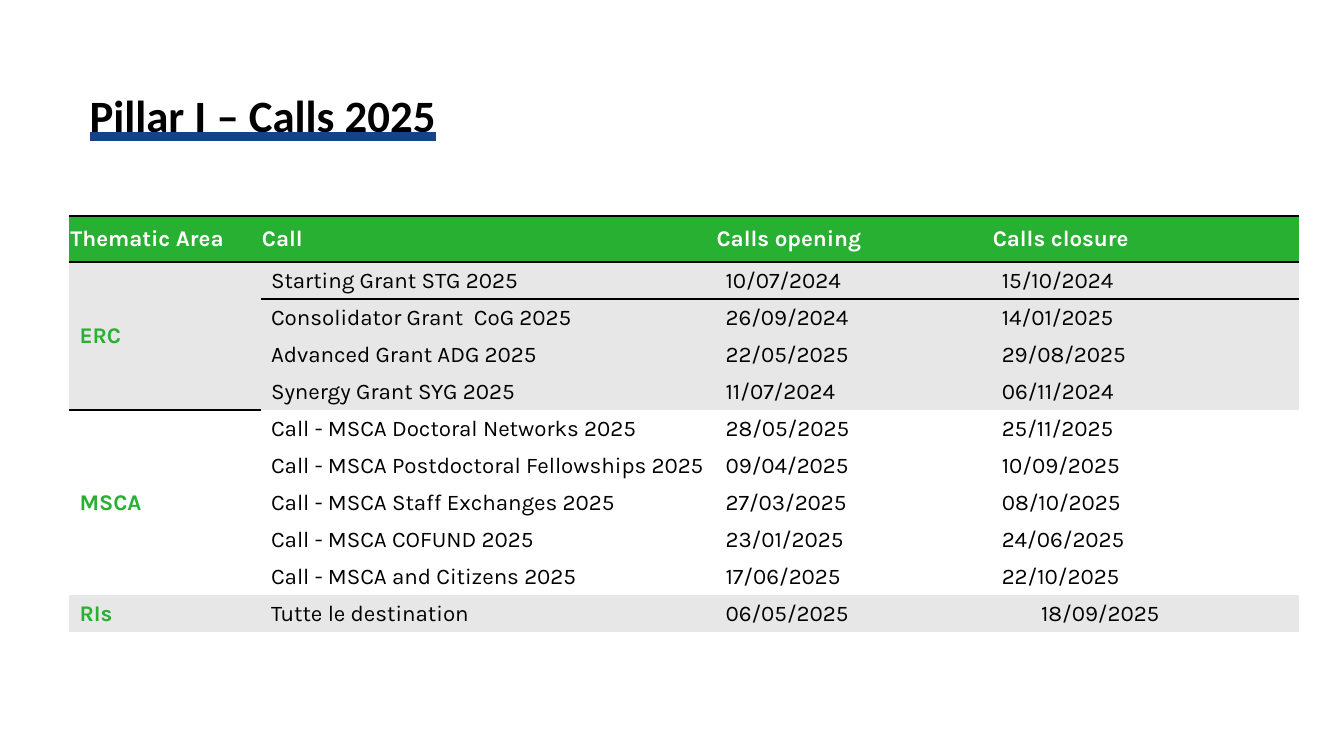
from lxml.etree import SubElement
from pptx import Presentation
from pptx.dml.color import RGBColor
from pptx.enum.text import MSO_ANCHOR, MSO_UNDERLINE
from pptx.oxml import parse_xml
from pptx.oxml.ns import nsdecls, qn
from pptx.util import Pt

BLACK = RGBColor(0x00, 0x00, 0x00)
WHITE = RGBColor(0xFF, 0xFF, 0xFF)
GREEN = RGBColor(0x28, 0xB0, 0x32)
GREY = RGBColor(0xE7, 0xE7, 0xE7)
BLUE = RGBColor(0x17, 0x42, 0x8A)

NO_STYLE = "{2D5ABB26-0587-4C30-8999-92F81FD0307C}"
COLUMN_WIDTHS = [136.8, 324.7, 197.3, 219.6]
HEADER_HEIGHT, ROW_HEIGHT = 33.4, 25.9
HEADINGS = ["Thematic Area", "Call", "Calls opening", "Calls closure"]
AREAS = [
    ("ERC", GREY, [
        ("Starting Grant STG 2025", "10/07/2024", "15/10/2024"),
        ("Consolidator Grant  CoG 2025", "26/09/2024", "14/01/2025"),
        ("Advanced Grant ADG 2025", "22/05/2025", "29/08/2025"),
        ("Synergy Grant SYG 2025", "11/07/2024", "06/11/2024"),
    ]),
    ("MSCA", None, [
        ("Call - MSCA Doctoral Networks 2025", "28/05/2025", "25/11/2025"),
        ("Call - MSCA Postdoctoral Fellowships 2025", "09/04/2025", "10/09/2025"),
        ("Call - MSCA Staff Exchanges 2025", "27/03/2025", "08/10/2025"),
        ("Call - MSCA COFUND 2025", "23/01/2025", "24/06/2025"),
        ("Call - MSCA and Citizens 2025", "17/06/2025", "22/10/2025"),
    ]),
    ("RIs", GREY, [("Tutte le destination", "06/05/2025", "18/09/2025")]),
]


def fill_cell(cell, text, color, bold, background):
    cell.vertical_anchor = MSO_ANCHOR.MIDDLE
    if background is None:
        cell.fill.background()
    else:
        cell.fill.solid()
        cell.fill.fore_color.rgb = background
    span = cell.text_frame.paragraphs[0].add_run()
    span.text = text
    span.font.name = "Karla"
    span.font.size = Pt(16)
    span.font.bold = bold
    span.font.color.rgb = color


def add_rule(cell, side):
    """Draw a black border on one side of a cell: lnT or lnB."""
    properties = cell._tc.get_or_add_tcPr()
    line = parse_xml(
        f'<a:{side} {nsdecls("a")} w="{Pt(1.5)}"><a:solidFill>'
        f'<a:srgbClr val="{BLACK}"/></a:solidFill></a:{side}>')
    properties.insert(len(properties.findall(qn("a:lnT"))), line)


deck = Presentation()
deck.slide_width, deck.slide_height = Pt(960), Pt(540)
page = deck.slides.add_slide(deck.slide_layouts[6])

# Title with a heavy coloured underline
title = page.shapes.add_textbox(Pt(56.9), Pt(47.5), Pt(828), Pt(73.4))
title.text_frame.word_wrap = True
title.text_frame.vertical_anchor = MSO_ANCHOR.MIDDLE
para = title.text_frame.paragraphs[0]
para.line_spacing = 0.9
span = para.add_run()
span.text = "Pillar I – Calls 2025"
span.font.size = Pt(32)
span.font.bold = True
span.font.underline = MSO_UNDERLINE.HEAVY_LINE
span.font.color.rgb = BLACK
underline = SubElement(span.font._element, qn("a:uFill"))
underline_fill = SubElement(underline, qn("a:solidFill"))
SubElement(underline_fill, qn("a:srgbClr"), val=str(BLUE))
span.font.name = "Calibri"

# Table of calls
row_count = 1 + sum(len(calls) for _, _, calls in AREAS)
frame = page.shapes.add_table(
    row_count, len(HEADINGS), Pt(49.6), Pt(154), Pt(sum(COLUMN_WIDTHS)),
    Pt(HEADER_HEIGHT + ROW_HEIGHT * (row_count - 1)))
table = frame.table
table.first_row = table.horz_banding = False
table._tbl.tblPr.find(qn("a:tableStyleId")).text = NO_STYLE
for column, width in zip(table.columns, COLUMN_WIDTHS):
    column.width = Pt(width)
for row in table.rows:
    row.height = Pt(ROW_HEIGHT)
table.rows[0].height = Pt(HEADER_HEIGHT)

for index, heading in enumerate(HEADINGS):
    cell = table.cell(0, index)
    fill_cell(cell, heading, WHITE, True, GREEN)
    cell.margin_left = cell.margin_right = cell.margin_top = Pt(0.75)
    cell.margin_bottom = Pt(0)
    add_rule(cell, "lnT")
    add_rule(cell, "lnB")

first = 1
for area, background, calls in AREAS:
    if len(calls) > 1:
        table.cell(first, 0).merge(table.cell(first + len(calls) - 1, 0))
    for offset, call in enumerate(calls):
        label = area if offset == 0 else ""
        fill_cell(table.cell(first + offset, 0), label, GREEN, True, background)
        for index, text in enumerate(call, start=1):
            fill_cell(table.cell(first + offset, index), text, BLACK, False, background)
    first += len(calls)

for index in range(len(HEADINGS)):
    add_rule(table.cell(1, index), "lnT")

last_closure = table.cell(row_count - 1, 3).text_frame.paragraphs[0]
last_closure._p.get_or_add_pPr().set("marL", str(Pt(28)))

deck.save("out.pptx")
